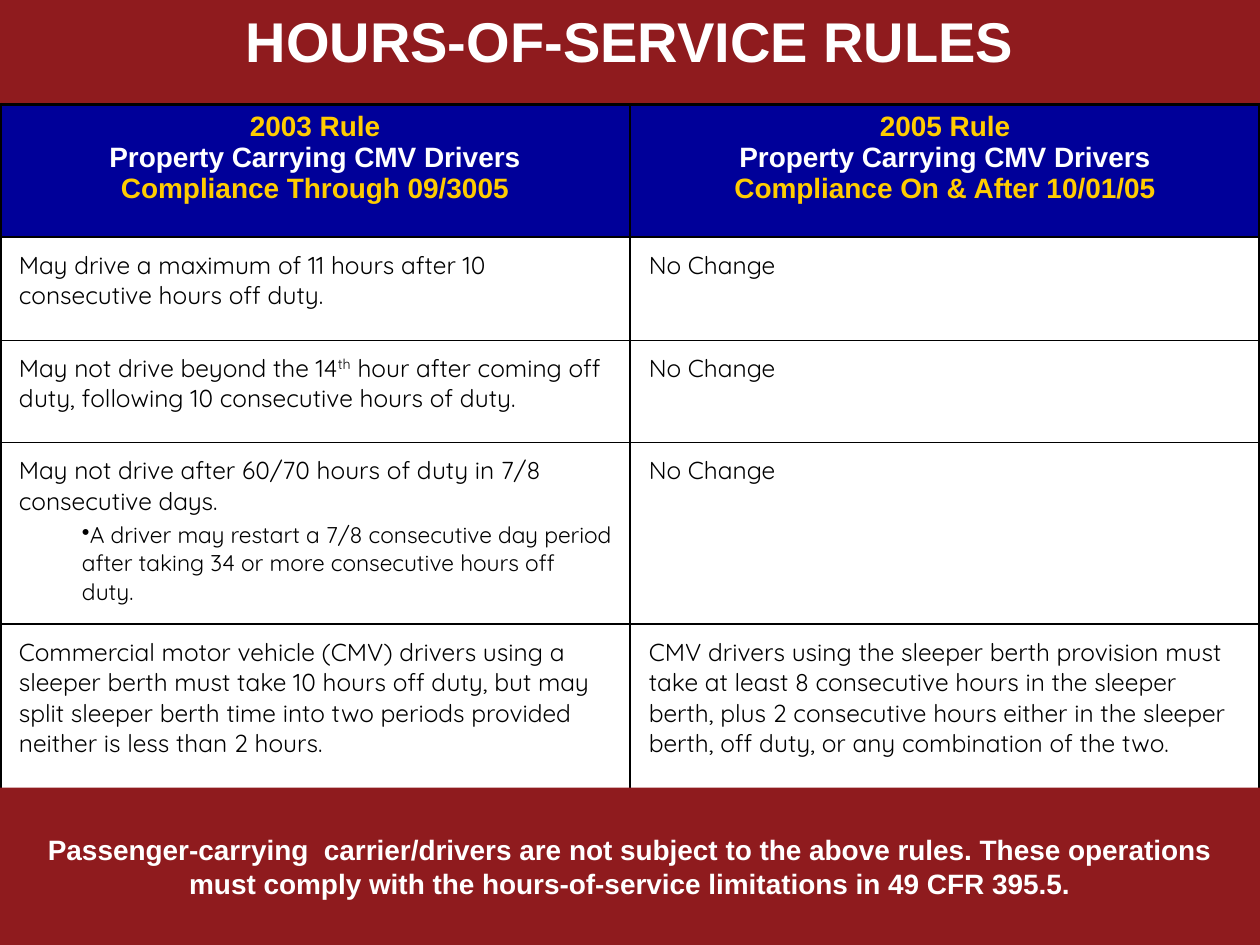
from lxml.etree import SubElement
from pptx import Presentation
from pptx.dml.color import RGBColor
from pptx.enum.shapes import MSO_SHAPE
from pptx.enum.text import MSO_ANCHOR, MSO_AUTO_SIZE, PP_ALIGN
from pptx.oxml.ns import qn
from pptx.util import Cm, Pt

MAROON = RGBColor(0x8F, 0x1B, 0x1E)
NAVY = RGBColor(0x00, 0x00, 0x99)
GOLD = RGBColor(0xFF, 0xCC, 0x00)
WHITE = RGBColor(0xFF, 0xFF, 0xFF)
BLACK = RGBColor(0x00, 0x00, 0x00)

HEADERS = [
    ("2003 Rule", "Property Carrying CMV Drivers", "Compliance Through 09/3005"),
    ("2005 Rule", "Property Carrying CMV Drivers", "Compliance On & After 10/01/05"),
]
NO_CHANGE = ["No Change"]
RULES = [
    (["May drive a maximum of 11 hours after 10 consecutive hours off duty."], NO_CHANGE),
    (["May not drive beyond the 14^th^ hour after coming off duty, "
      "following 10 consecutive hours of duty."], NO_CHANGE),
    (["May not drive after 60/70 hours of duty in 7/8 consecutive days.",
      "A driver may restart a 7/8 consecutive day period after taking "
      "34 or more consecutive hours off duty."], NO_CHANGE),
    (["Commercial motor vehicle (CMV) drivers using a sleeper berth must take "
      "10 hours off duty, but may split sleeper berth time into two periods "
      "provided neither is less than 2 hours."],
     ["CMV drivers using the sleeper berth provision must take at least "
      "8 consecutive hours in the sleeper berth, plus 2 consecutive hours either "
      "in the sleeper berth, off duty, or any combination of the two."]),
]
ROW_HEIGHTS = [2.67, 2.08, 2.06, 3.66, 3.5]
THICK, THIN = Pt(2.25), Pt(1)


def add_run(p, text, font, size, color, bold=False):
    r = p.add_run()
    r.text = text
    r.font.name = font
    r.font.size = Pt(size)
    r.font.bold = bold
    r.font.color.rgb = color
    return r


def fill_band(sp, text, size, anchor, side):
    sp.fill.solid()
    sp.fill.fore_color.rgb = MAROON
    tf = sp.text_frame
    tf.word_wrap = True
    tf.auto_size = MSO_AUTO_SIZE.NONE
    tf.vertical_anchor = anchor
    tf.margin_left = tf.margin_right = side
    tf.margin_top = tf.margin_bottom = Cm(0.13)
    p = tf.paragraphs[0]
    p.alignment = PP_ALIGN.CENTER
    add_run(p, text, "Arial", size, WHITE, True)


def add_title(slide, x, y, w, h):
    sp = slide.shapes.title
    sp.left, sp.top, sp.width, sp.height = x, y, w, h
    fill_band(sp, "HOURS-OF-SERVICE RULES", 32, MSO_ANCHOR.TOP, Cm(1.27))


def add_footer(slide, x, y, w, h):
    sp = slide.shapes.add_shape(MSO_SHAPE.RECTANGLE, x, y, w, h)
    sp.shadow.inherit = False
    sp.line.fill.background()
    fill_band(sp, "Passenger-carrying  carrier/drivers are not subject to the above rules. "
              "These operations must comply with the hours-of-service limitations "
              "in 49 CFR 395.5.", 16, MSO_ANCHOR.MIDDLE, Cm(0.25))


def set_borders(cell, **widths):
    tcPr = cell._tc.get_or_add_tcPr()
    for side in "LRTB":
        ln = SubElement(tcPr, qn(f"a:ln{side}"), w=str(widths[side]))
        fill = SubElement(ln, qn("a:solidFill"))
        SubElement(fill, qn("a:srgbClr"), val=str(BLACK))


def write_header(cell, lines):
    p = cell.text_frame.paragraphs[0]
    p.alignment = PP_ALIGN.CENTER
    for i, (line, color) in enumerate(zip(lines, (GOLD, WHITE, GOLD))):
        if i:
            p.add_line_break()
        add_run(p, line, "Arial", 16, color, True)


def write_rule(cell, texts):
    cell.margin_left = cell.margin_right = Cm(0.38)
    cell.margin_top = cell.margin_bottom = Cm(0.25)
    tf = cell.text_frame
    for i, text in enumerate(texts):
        p = tf.add_paragraph() if i else tf.paragraphs[0]
        if i:
            pPr = p._p.get_or_add_pPr()
            pPr.set("marL", str(Cm(1.27)))
            pPr.set("indent", "0")
            SubElement(pPr, qn("a:buChar"), char="•")
            p.level = 1
            p.space_before = Pt(2.6)
        for j, part in enumerate(text.split("^")):
            r = add_run(p, part, "Quicksand", 13 if i else 14, BLACK)
            if j == 1:
                r.font._element.set("baseline", "30000")


def add_rules_table(slide, x, y, w):
    rows, cols = len(ROW_HEIGHTS), len(HEADERS)
    heights = [Cm(h) for h in ROW_HEIGHTS]
    table = slide.shapes.add_table(rows, cols, x, y, w, sum(heights)).table
    table.first_row = table.horz_banding = False
    for row, height in zip(table.rows, heights):
        row.height = height
    for col in table.columns:
        col.width = w // cols
    for r, texts in enumerate([HEADERS, *RULES]):
        for c, text in enumerate(texts):
            cell = table.cell(r, c)
            set_borders(cell, L=THIN if c else THICK,
                        R=THICK if c == cols - 1 else THIN,
                        T=THIN if r else THICK,
                        B=THICK if r == rows - 1 else THIN)
            cell.fill.solid()
            cell.fill.fore_color.rgb = WHITE if r else NAVY
            write = write_rule if r else write_header
            write(cell, text)


def main():
    prs = Presentation()
    prs.slide_width, prs.slide_height = Cm(25.4), Cm(19.05)
    slide = prs.slides.add_slide(prs.slide_layouts[5])
    w = prs.slide_width
    footer_top = Cm(15.88)
    add_title(slide, 0, 0, w, Cm(2.74))
    add_rules_table(slide, 0, Cm(2.11), w)
    add_footer(slide, 0, footer_top, w, prs.slide_height - footer_top)
    prs.save("out.pptx")


if __name__ == "__main__":
    main()
